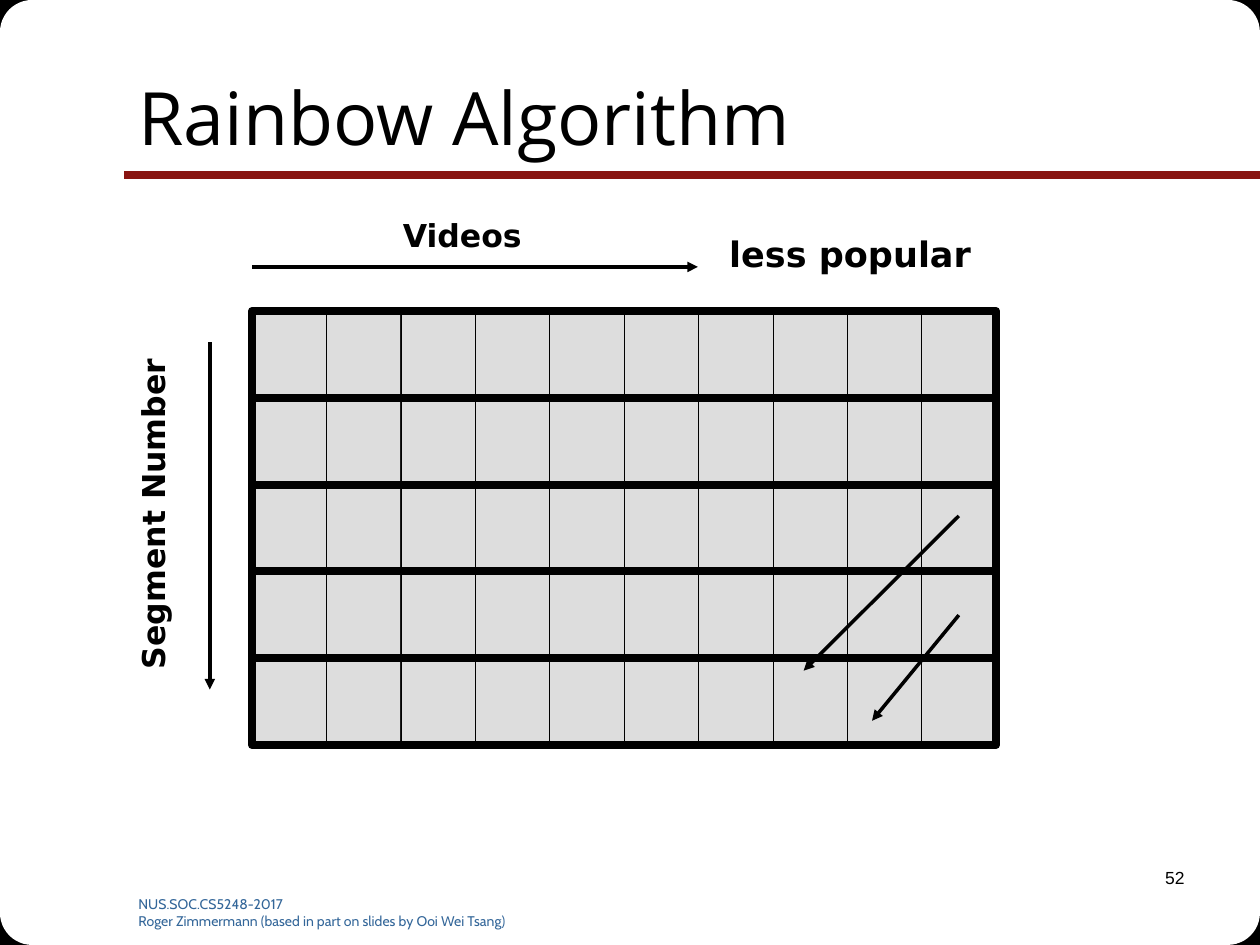
from pptx import Presentation
from pptx.dml.color import RGBColor
from pptx.enum.shapes import MSO_CONNECTOR, MSO_SHAPE
from pptx.enum.text import MSO_ANCHOR, PP_ALIGN
from pptx.oxml.ns import qn
from pptx.util import Cm, Pt
from lxml import etree

RECT, ROUND = MSO_SHAPE.RECTANGLE, MSO_SHAPE.ROUNDED_RECTANGLE
STRAIGHT = MSO_CONNECTOR.STRAIGHT
TOP, MIDDLE = MSO_ANCHOR.TOP, MSO_ANCHOR.MIDDLE
LEFT, RIGHT = PP_ALIGN.LEFT, PP_ALIGN.RIGHT

BLACK = RGBColor(0, 0, 0)
THEME = {
    "paper": RGBColor(0xFF, 0xFF, 0xFF),
    "cell": RGBColor(0xDD, 0xDD, 0xDD),
    "rule": RGBColor(0x89, 0x14, 0x11),
    "footer": {"name": "Cabin", "size": Pt(8), "color": RGBColor(0x33, 0x66, 0x99)},
    "number": {"name": "Arial", "size": Pt(10), "color": BLACK},
    "title": {"name": "Open Sans", "size": Pt(42), "color": BLACK},
    "axis": {"name": "DejaVu Sans", "size": Pt(18), "bold": True, "color": BLACK},
    "note": {"name": "DejaVu Sans", "size": Pt(20), "bold": True, "color": BLACK},
}
WIDTH, HEIGHT = 25.4, 19.05
COLS, ROWS = 10, 5
GRID_X, GRID_Y, CELL_W, CELL_H = 5.08, 6.27, 1.5, 1.75


def add_box(kind, x, y, w, h, fill=None, line=None):
    """Add a preset shape in cm; line is a black outline width in points."""
    sp = s.shapes.add_shape(kind, Cm(x), Cm(y), Cm(w), Cm(h))
    sp.shadow.inherit = False
    if fill is None:
        sp.fill.background()
    else:
        sp.fill.solid()
        sp.fill.fore_color.rgb = fill
    if line is None:
        sp.line.fill.background()
    else:
        sp.line.color.rgb = BLACK
        sp.line.width = Pt(line)


def add_line(x1, y1, x2, y2, color, width, arrow=True):
    cx = s.shapes.add_connector(STRAIGHT, Cm(x1), Cm(y1), Cm(x2), Cm(y2))
    cx.line.color.rgb = color
    cx.line.width = Pt(width)
    if arrow:
        etree.SubElement(cx.line._get_or_add_ln(), qn("a:tailEnd"), type="triangle")
    etree.SubElement(cx._element.spPr, qn("a:effectLst"))


prs = Presentation()
prs.slide_width, prs.slide_height = Cm(WIDTH), Cm(HEIGHT)
s = prs.slides.add_slide(prs.slide_layouts[6])

# Black corners, each rounded off by a white shape on top
for kind, side, fill, line in ((RECT, 1.1, BLACK, 0.75),
                               (ROUND, 3.89, THEME["paper"], None)):
    for x in (0, WIDTH - side):
        for y in (0, HEIGHT - side):
            add_box(kind, x, y, side, side, fill, line)
add_line(WIDTH, 3.53, 2.5, 3.53, THEME["rule"], 4.5, arrow=False)

# Grid: one column per video, one row per segment
for row in range(ROWS):
    for col in range(COLS):
        add_box(RECT, GRID_X + col * CELL_W, GRID_Y + row * CELL_H,
                CELL_W, CELL_H, THEME["cell"], 0.25)

# Axis arrows, then the diagonal arrows
for ends in ((5.08, 5.38, 14.07, 5.38), (4.23, 6.9, 4.23, 13.9),
             (19.33, 12.4, 17.58, 14.53), (19.33, 10.4, 16.2, 13.52)):
    add_line(*ends, BLACK, 2)

for row in range(ROWS):
    add_box(RECT, GRID_X, GRID_Y + row * CELL_H, COLS * CELL_W, CELL_H, line=4.5)

# Text: lines, position, style, alignment, anchor, wrap, direction
texts = (
    (("NUS.SOC.CS5248-2017",
      "Roger Zimmermann (based in part on slides by Ooi Wei Tsang)"),
     (2.54, 17.93, 9.32, 0.71), "footer", LEFT, TOP, True, "horz"),
    (("52",), (18.85, 17.35, 5.28, 1.27), "number", RIGHT, TOP, True, "horz"),
    (("Rainbow Algorithm",), (2.54, 0.76, 21.59, 3.18), "title", LEFT, MIDDLE, True, "horz"),
    (("less popular",), (14.45, 4.57, 5.38, 1.12), "note", LEFT, TOP, False, "horz"),
    (("Segment Number",), (2.57, 6.27, 1.27, 7.47), "axis", LEFT, TOP, True, "vert270"),
    (("Videos",), (7.87, 4.24, 2.92, 1.02), "axis", LEFT, TOP, False, "horz"),
)
for lines, box, style, align, anchor, wrap, direction in texts:
    tf = s.shapes.add_textbox(*map(Cm, box)).text_frame
    tf.word_wrap, tf.vertical_anchor = wrap, anchor
    tf._txBody.bodyPr.set("vert", direction)
    for i, line in enumerate(lines):
        p = tf.add_paragraph() if i else tf.paragraphs[0]
        p.alignment = align
        r = p.add_run()
        r.text = line
        for key, value in THEME[style].items():
            if key == "color":
                r.font.color.rgb = value
            else:
                setattr(r.font, key, value)

prs.save("out.pptx")
